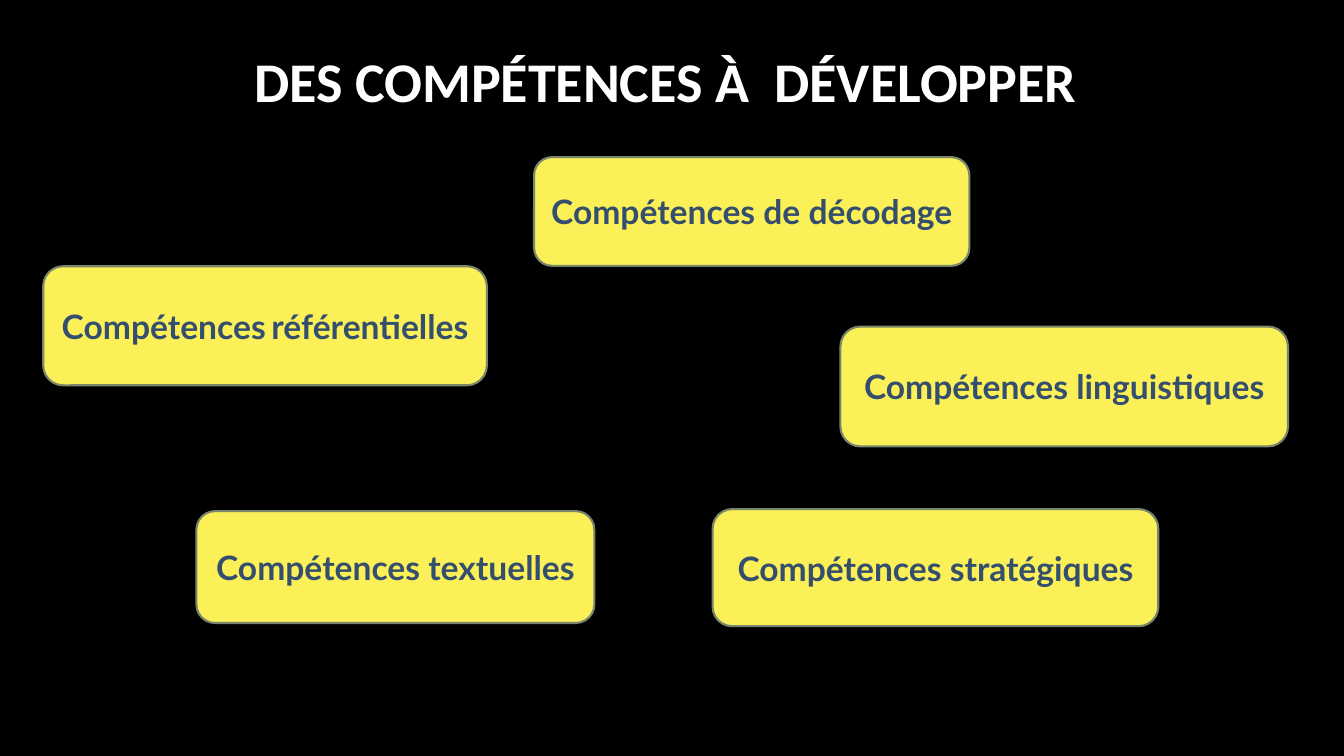
from pptx import Presentation
from pptx.dml.color import RGBColor
from pptx.enum.shapes import MSO_SHAPE
from pptx.enum.text import MSO_ANCHOR, MSO_AUTO_SIZE, PP_ALIGN
from pptx.util import Cm, Pt

TITLE_FONT = {"name": "Calibri", "size": Pt(40), "bold": True}
SKILL_FONT = {"name": "Lato", "size": Pt(24), "bold": True}
SPACE_FONT = {"name": "Calibri", "size": Pt(18), "bold": False}

SKILLS = [
    ((13.46, 3.96, 10.97, 2.74), [("Compétences de décodage", SKILL_FONT)]),
    ((21.18, 8.23, 11.28, 3.02), [("Compétences linguistiques", SKILL_FONT)]),
    ((1.09, 6.71, 11.18, 3), [("Compétences", SKILL_FONT), (" ", SPACE_FONT),
                              ("référentielles", SKILL_FONT)]),
    ((17.96, 12.83, 11.23, 2.95), [("Compétences stratégiques", SKILL_FONT)]),
    ((4.95, 12.88, 10.03, 2.82), [("Compétences textuelles", SKILL_FONT)]),
]


def color(value):
    """Turn a hex string into a colour."""
    return RGBColor.from_string(value)


def set_attrs(obj, attrs):
    """Set each attribute of an object from a dict."""
    for name, value in attrs.items():
        setattr(obj, name, value)


def write(tf, runs, ink, align):
    """Write one vertically centred paragraph of formatted runs."""
    set_attrs(tf, {"word_wrap": True, "auto_size": MSO_AUTO_SIZE.NONE,
                   "vertical_anchor": MSO_ANCHOR.MIDDLE})
    p = tf.paragraphs[0]
    p.alignment = align
    for text, font in runs:
        r = p.add_run()
        r.text = text
        set_attrs(r.font, font)
        r.font.color.rgb = color(ink)


def add_title(s, box, text):
    """Place and fill the title placeholder."""
    sp = s.shapes.title
    set_attrs(sp, dict(zip(("left", "top", "width", "height"), map(Cm, box))))
    sp.text_frame.margin_right = 0
    write(sp.text_frame, [(text, TITLE_FONT)], "FFFFFF", PP_ALIGN.LEFT)


def add_skill(s, box, runs):
    """Draw one rounded yellow box naming a skill."""
    sp = s.shapes.add_shape(MSO_SHAPE.ROUNDED_RECTANGLE, *map(Cm, box))
    sp.shadow.inherit = False
    sp.fill.solid()
    sp.fill.fore_color.rgb = color("FCF059")
    sp.line.color.rgb = color("7A866C")
    sp.line.width = Pt(1.5)
    write(sp.text_frame, runs, "344E6D", PP_ALIGN.CENTER)


def build_skills_slide(prs):
    """Build the slide of skills on a black background."""
    s = prs.slides.add_slide(prs.slide_layouts[5])
    s.background.fill.solid()
    s.background.fill.fore_color.rgb = color("000000")
    add_title(s, (6.15, 0.89, 21.23, 2.24), "DES COMPÉTENCES À  DÉVELOPPER")
    for box, runs in SKILLS:
        add_skill(s, box, runs)


def main():
    """Create and save the presentation."""
    prs = Presentation()
    set_attrs(prs, {"slide_width": Cm(33.87), "slide_height": Cm(19.05)})
    build_skills_slide(prs)
    prs.save("out.pptx")


if __name__ == "__main__":
    main()
